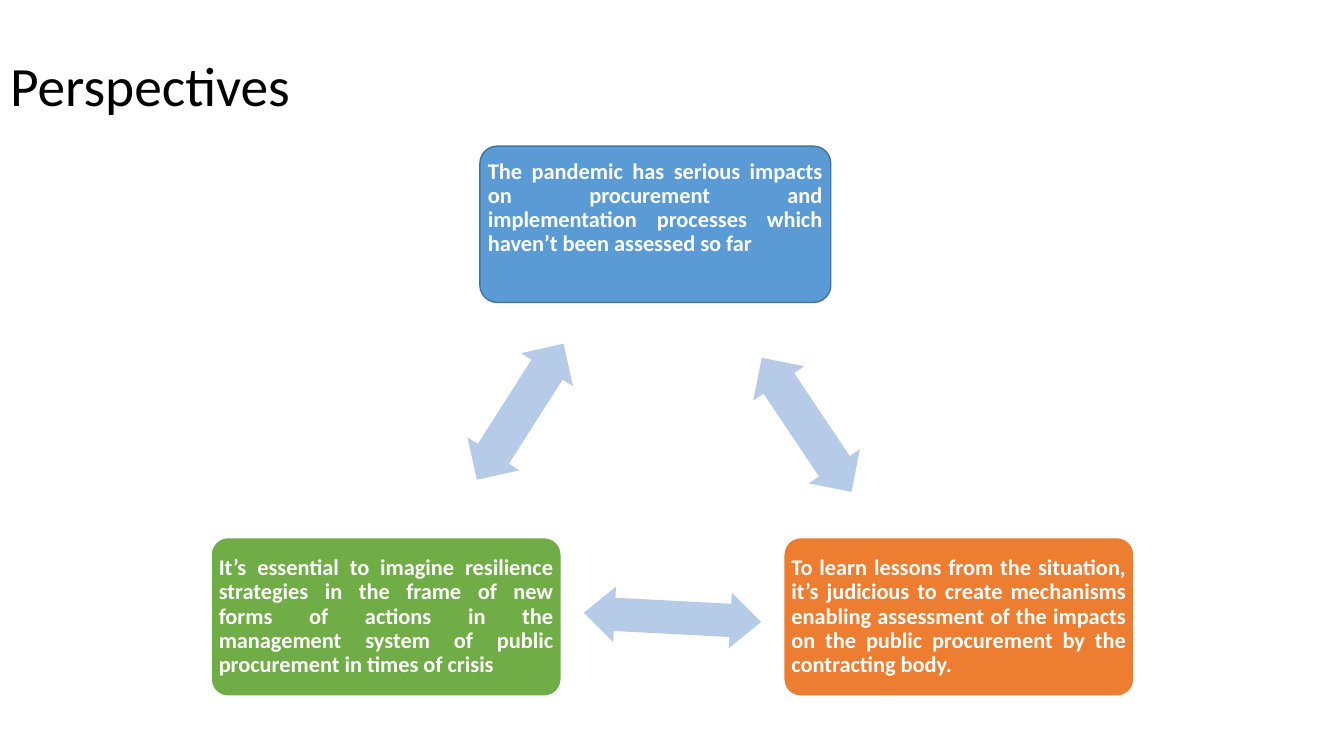
from pptx import Presentation
from pptx.dml.color import RGBColor
from pptx.enum.shapes import MSO_SHAPE
from pptx.enum.text import MSO_ANCHOR, MSO_AUTO_SIZE, PP_ALIGN
from pptx.util import Inches, Pt

ROUNDED = MSO_SHAPE.ROUNDED_RECTANGLE
DOUBLE_ARROW = MSO_SHAPE.LEFT_RIGHT_ARROW
MIDDLE = MSO_ANCHOR.MIDDLE
NO_FIT = MSO_AUTO_SIZE.NONE
LEFT, JUSTIFY = PP_ALIGN.LEFT, PP_ALIGN.JUSTIFY
TITLE_ONLY = 5


class Theme:
    font = "Calibri"
    title_size, body_size = 39.6, 16
    line_spacing = 0.9
    black, white = "000000", "FFFFFF"
    blue, blue_edge = "5B9BD5", "43739E"
    orange, green = "ED7D31", "70AD47"
    arrow = "B5CBE7"


class CycleSlide:
    corner_radius = 0.17
    text_margin = 0.03
    arrow_head = 0.305

    def __init__(self, deck, theme):
        self.theme = theme
        self.page = deck.slides.add_slide(deck.slide_layouts[TITLE_ONLY])

    def set_text(self, frame, text, size, color, align, bold=False):
        frame.word_wrap = True
        frame.auto_size = NO_FIT
        frame.vertical_anchor = MIDDLE
        frame.text = text
        para = frame.paragraphs[0]
        para.alignment = align
        para.line_spacing = self.theme.line_spacing
        for span in para.runs:
            span.font.name = self.theme.font
            span.font.size = Pt(size)
            span.font.bold = bold
            span.font.color.rgb = RGBColor.from_string(color)

    def title(self, text, left, top, width, height):
        box = self.page.shapes.title
        box.left, box.top = Inches(left), Inches(top)
        box.width, box.height = Inches(width), Inches(height)
        self.set_text(box.text_frame, text, self.theme.title_size, self.theme.black, LEFT)

    def shape(self, kind, left, top, width, height, fill):
        shape = self.page.shapes.add_shape(
            kind, Inches(left), Inches(top), Inches(width), Inches(height))
        shape.shadow.inherit = False
        shape.fill.solid()
        shape.fill.fore_color.rgb = RGBColor.from_string(fill)
        return shape

    def card(self, text, left, top, width, height, fill, edge, edge_width, lift=0):
        """Rounded box; lift is extra bottom margin that raises the text."""
        box = self.shape(ROUNDED, left, top, width, height, fill)
        box.adjustments[0] = self.corner_radius / height
        box.line.color.rgb = RGBColor.from_string(edge)
        box.line.width = Pt(edge_width)
        frame = box.text_frame
        frame.margin_left = frame.margin_right = frame.margin_top = Inches(self.text_margin)
        frame.margin_bottom = Inches(self.text_margin + lift)
        self.set_text(frame, text, self.theme.body_size, self.theme.white, JUSTIFY, bold=True)

    def arrow(self, left, top, width, height, rotation):
        arrow = self.shape(DOUBLE_ARROW, left, top, width, height, self.theme.arrow)
        arrow.adjustments[0] = 0.6
        arrow.adjustments[1] = self.arrow_head / height
        arrow.line.fill.background()
        arrow.rotation = rotation


def main():
    deck = Presentation()
    deck.slide_width, deck.slide_height = Inches(13.33), Inches(7.5)
    theme = Theme()
    slide = CycleSlide(deck, theme)

    slide.title("Perspectives", 0, 0.54, 11.72, 0.68)

    # Three linked statements
    slide.card("The pandemic has serious impacts on procurement and implementation "
               "processes which haven’t been assessed so far",
               4.76, 1.45, 3.48, 1.55, theme.blue, theme.blue_edge, 1, lift=0.32)
    lower_cards = [
        ("To learn lessons from the situation, it’s judicious to create mechanisms "
         "enabling assessment of the impacts on the public procurement by the "
         "contracting body.", 7.77, theme.orange),
        ("It’s essential to imagine resilience strategies in the frame of new forms "
         "of actions in the management system of public procurement in times of crisis",
         2.09, theme.green),
    ]
    for text, left, fill in lower_cards:
        slide.card(text, left, 5.33, 3.48, 1.58, fill, theme.white, 1.5)

    # Arrows between the statements
    slide.arrow(7.2, 3.91, 1.6, 0.61, 56.2)
    slide.arrow(5.79, 5.85, 1.76, 0.55, 3)
    slide.arrow(4.36, 3.78, 1.6, 0.61, 302.5)

    deck.save("out.pptx")


if __name__ == "__main__":
    main()
